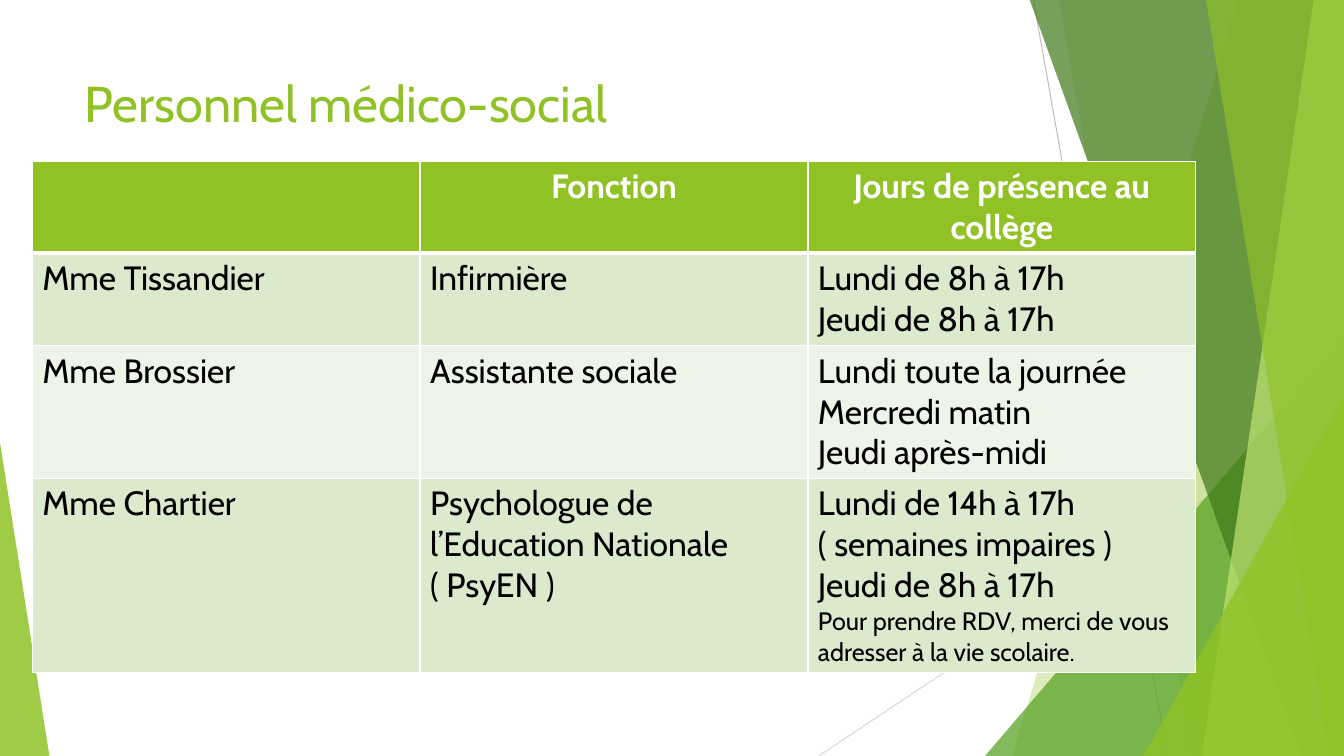
from dataclasses import dataclass

import lxml.etree
import pptx
import pptx.dml.color
import pptx.enum.shapes
import pptx.enum.text
import pptx.oxml.ns
import pptx.util

Inches = pptx.util.Inches
PAGE_WIDTH, PAGE_HEIGHT = 13.33, 7.5


@dataclass(frozen=True)
class Theme:
    font: str = "Cabin"
    accent: str = "90C226"
    green: str = "54A021"
    forest: str = "3F7819"
    lime: str = "C0E474"
    text: str = "000000"
    white: str = "FFFFFF"
    bands: tuple[str, str] = ("DBE9CD", "EEF4E8")
    title_size: int = 36
    table_size: int = 24
    note_size: int = 18


THEME = Theme()


@dataclass(frozen=True)
class Ray:
    start: tuple[float, float]
    end: tuple[float, float]
    color: str


@dataclass(frozen=True)
class Wedge:
    """A full-height panel against the right edge with a slanted left side."""
    top_x: float
    bottom_x: float
    color: str
    opacity: int


@dataclass(frozen=True)
class Corner:
    """A right triangle standing on the bottom edge."""
    left: float
    top: float
    width: float
    apex: float
    color: str
    opacity: int


@dataclass(frozen=True)
class Row:
    height: float
    cells: tuple[tuple[str, ...], ...]
    note: str = ""


RAYS = (
    Ray((10.25, 0), (11.58, PAGE_HEIGHT), "BFBFBF"),
    Ray((PAGE_WIDTH, 4.03), (8.12, PAGE_HEIGHT), "D9D9D9"),
)
PANELS = (
    Wedge(12.28, 10.04, THEME.accent, 30),
    Wedge(10.5, 11.83, THEME.accent, 20),
    Corner(9.77, 3.33, 3.56, 1, THEME.green, 72),
    Wedge(10.21, 12.91, THEME.forest, 70),
    Wedge(13.03, 11.92, THEME.lime, 70),
    Wedge(11.96, 13.18, THEME.accent, 65),
    Corner(11.34, 3.93, 1.99, 1, THEME.accent, 80),
    Corner(0, 4.39, 0.49, 0, THEME.accent, 85),
)
ROWS = (
    Row(0.9, ((), ("Fonction",), ("Jours de présence au collège",))),
    Row(0.92, (("Mme Tissandier",), ("Infirmière",),
               ("Lundi de 8h à 17h", "Jeudi de 8h à 17h"))),
    Row(1.31, (("Mme Brossier",), ("Assistante sociale",),
               ("Lundi toute la journée", "Mercredi matin", "Jeudi après-midi"))),
    Row(1.92, (("Mme Chartier",),
               ("Psychologue de l’Education Nationale", "( PsyEN )"),
               ("Lundi de 14h à 17h", "( semaines impaires )", "Jeudi de 8h à 17h")),
        note="Pour prendre RDV, merci de vous adresser à la vie scolaire."),
)


def rgb(color: str) -> pptx.dml.color.RGBColor:
    return pptx.dml.color.RGBColor.from_string(color)


def add_span(para, text: str, size: int, color: str, bold: bool = False) -> None:
    span = para.add_run()
    span.text = text
    span.font.name = THEME.font
    span.font.size = pptx.util.Pt(size)
    span.font.bold = bold
    span.font.color.rgb = rgb(color)


def draw_ray(page, ray: Ray) -> None:
    line = page.shapes.add_connector(
        pptx.enum.shapes.MSO_CONNECTOR.STRAIGHT,
        *(Inches(value) for value in ray.start + ray.end))
    line.line.color.rgb = rgb(ray.color)
    line.line.width = pptx.util.Pt(0.75)
    lxml.etree.SubElement(line.element.spPr, pptx.oxml.ns.qn("a:effectLst"))


def draw_panel(page, panel: Wedge | Corner) -> None:
    if isinstance(panel, Wedge):
        top = Inches(-0.01)
        right, bottom = Inches(PAGE_WIDTH), Inches(PAGE_HEIGHT)
        outline = page.shapes.build_freeform(Inches(panel.top_x), top)
        outline.add_line_segments(
            [(right, top), (right, bottom), (Inches(panel.bottom_x), bottom)])
        shape = outline.convert_to_shape()
    else:
        shape = page.shapes.add_shape(
            pptx.enum.shapes.MSO_SHAPE.ISOSCELES_TRIANGLE,
            Inches(panel.left), Inches(panel.top),
            Inches(panel.width), Inches(PAGE_HEIGHT - panel.top))
        shape.adjustments[0] = panel.apex
    shape.shadow.inherit = False
    shape.line.fill.background()
    shape.fill.solid()
    shape.fill.fore_color.rgb = rgb(panel.color)
    color = shape.element.spPr.find(".//" + pptx.oxml.ns.qn("a:srgbClr"))
    alpha = lxml.etree.SubElement(color, pptx.oxml.ns.qn("a:alpha"))
    alpha.set("val", str(panel.opacity * 1000))


def set_borders(cell, top: int, bottom: int) -> None:
    """Draw white borders; the widths above and below are in points."""
    properties = cell._tc.get_or_add_tcPr()
    widths = {"lnL": 1, "lnR": 1, "lnT": top, "lnB": bottom}
    for position, (side, width) in enumerate(widths.items()):
        border = lxml.etree.Element(pptx.oxml.ns.qn(f"a:{side}"))
        border.set("w", str(pptx.util.Pt(width)))
        fill = lxml.etree.SubElement(border, pptx.oxml.ns.qn("a:solidFill"))
        color = lxml.etree.SubElement(fill, pptx.oxml.ns.qn("a:srgbClr"))
        color.set("val", THEME.white)
        properties.insert(position, border)


def fill_cell(cell, lines: tuple[str, ...], note: str, row_index: int) -> None:
    header = row_index == 0
    cell.fill.solid()
    cell.fill.fore_color.rgb = rgb(
        THEME.accent if header else THEME.bands[(row_index - 1) % 2])
    set_borders(cell, top=3 if row_index == 1 else 1, bottom=3 if header else 1)
    spans = [(line, THEME.table_size) for line in lines]
    if note:
        spans.append((note, THEME.note_size))
    frame = cell.text_frame
    for index, (text, size) in enumerate(spans):
        para = frame.add_paragraph() if index else frame.paragraphs[0]
        para.alignment = (pptx.enum.text.PP_ALIGN.CENTER if header
                          else pptx.enum.text.PP_ALIGN.LEFT)
        add_span(para, text, size, THEME.white if header else THEME.text, header)


def draw_table(page, rows: tuple[Row, ...]) -> None:
    column_count = len(rows[0].cells)
    table = page.shapes.add_table(
        len(rows), column_count, Inches(0.32), Inches(1.6), Inches(11.54),
        Inches(sum(row.height for row in rows))).table
    for row_index, row in enumerate(rows):
        table.rows[row_index].height = Inches(row.height)
        for column, lines in enumerate(row.cells):
            note = row.note if column == column_count - 1 else ""
            fill_cell(table.cell(row_index, column), lines, note, row_index)


def write_title(page, text: str) -> None:
    title = page.shapes.title
    title.left, title.top = Inches(0.74), Inches(0.67)
    title.width, title.height = Inches(9.4), Inches(0.93)
    frame = title.text_frame
    frame.word_wrap = True
    frame.vertical_anchor = pptx.enum.text.MSO_ANCHOR.TOP
    para = frame.paragraphs[0]
    para.alignment = pptx.enum.text.PP_ALIGN.LEFT
    add_span(para, text, THEME.title_size, THEME.accent)
    # Bring the title in front of the panels.
    title.element.getparent().append(title.element)


def main() -> None:
    deck = pptx.Presentation()
    deck.slide_width, deck.slide_height = Inches(PAGE_WIDTH), Inches(PAGE_HEIGHT)
    page = deck.slides.add_slide(deck.slide_layouts.get_by_name("Title Only"))
    for ray in RAYS:
        draw_ray(page, ray)
    for panel in PANELS:
        draw_panel(page, panel)
    write_title(page, "Personnel médico-social")
    draw_table(page, ROWS)
    deck.save("out.pptx")


if __name__ == "__main__":
    main()
